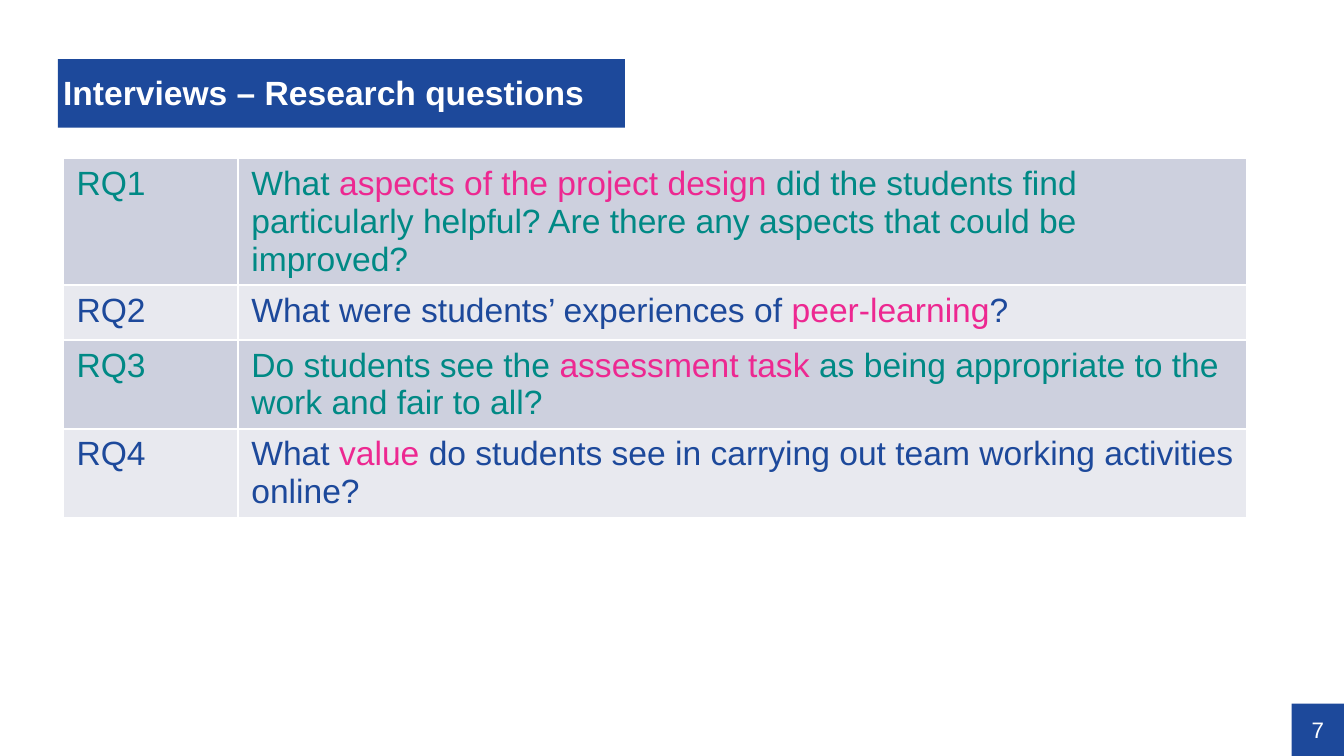
from pptx import Presentation
from pptx.dml.color import RGBColor
from pptx.enum.shapes import MSO_SHAPE
from pptx.enum.text import MSO_ANCHOR, MSO_AUTO_SIZE, PP_ALIGN
from pptx.util import Inches, Pt

BLUE, TEAL, PINK, WHITE = "1D499B", "008985", "ED2891", "FFFFFF"
BANDS = [("CDD0DE", TEAL), ("E8E9EF", BLUE)]  # fill, text


def fill(obj, color):
    obj.fill.solid()
    obj.fill.fore_color.rgb = RGBColor.from_string(color)


def add_run(p, text, color, size=18, bold=False):
    r = p.add_run()
    r.text = text
    r.font.name = "Arial"
    r.font.size = Pt(size)
    r.font.bold = bold
    r.font.color.rgb = RGBColor.from_string(color)


prs = Presentation()
prs.slide_width = Inches(10)
prs.slide_height = prs.slide_width * 9 // 16
s = prs.slides.add_slide(prs.slide_layouts[5])

# Title bar
title = s.shapes.title
title.left, title.top = Inches(0.43), Inches(0.44)
title.width, title.height = Inches(4.22), Inches(0.51)
fill(title, BLUE)
tf = title.text_frame
tf.auto_size = MSO_AUTO_SIZE.NONE
tf.vertical_anchor = MSO_ANCHOR.MIDDLE
tf.margin_left, tf.margin_top = Inches(0.04), Inches(0.02)
tf.margin_right = tf.margin_bottom = 0
p = tf.paragraphs[0]
p.alignment = PP_ALIGN.LEFT
p.line_spacing = 0.9
add_run(p, "Interviews – Research questions", WHITE, bold=True)

# Page number in the bottom right corner
side = Inches(0.39)
sp = s.shapes.add_shape(MSO_SHAPE.RECTANGLE, prs.slide_width - side,
                        prs.slide_height - side, side, side)
sp.shadow.inherit = False
fill(sp, BLUE)
sp.line.fill.background()
tf = sp.text_frame
tf.margin_left = tf.margin_top = tf.margin_right = tf.margin_bottom = 0
tf.vertical_anchor = MSO_ANCHOR.MIDDLE
p = tf.paragraphs[0]
p.alignment = PP_ALIGN.CENTER
add_run(p, "7", WHITE, size=12)

# Research questions: text before, key phrase, text after
questions = [
    ("What ", "aspects of the project design ",
     "did the students find particularly helpful? "
     "Are there any aspects that could be improved?"),
    ("What were students’ experiences of ", "peer-learning", "?"),
    ("Do students see the ", "assessment task ",
     "as being appropriate to the work and fair to all?"),
    ("What ", "value ",
     "do students see in carrying out team working activities online?"),
]
col_widths, row_height = (1.3, 7.51), 0.41
table = s.shapes.add_table(
    len(questions), len(col_widths), Inches(0.47), Inches(1.18),
    Inches(sum(col_widths)), Inches(row_height * len(questions))).table
table.first_row = False
for col, width in zip(table.columns, col_widths):
    col.width = Inches(width)

for i, (before, key, after) in enumerate(questions):
    band, color = BANDS[i % 2]
    label, question = table.cell(i, 0), table.cell(i, 1)
    fill(label, band)
    fill(question, band)
    add_run(label.text_frame.paragraphs[0], f"RQ{i + 1}", color)
    p = question.text_frame.paragraphs[0]
    for text, run_color in ((before, color), (key, PINK), (after, color)):
        add_run(p, text, run_color)

prs.save("out.pptx")
